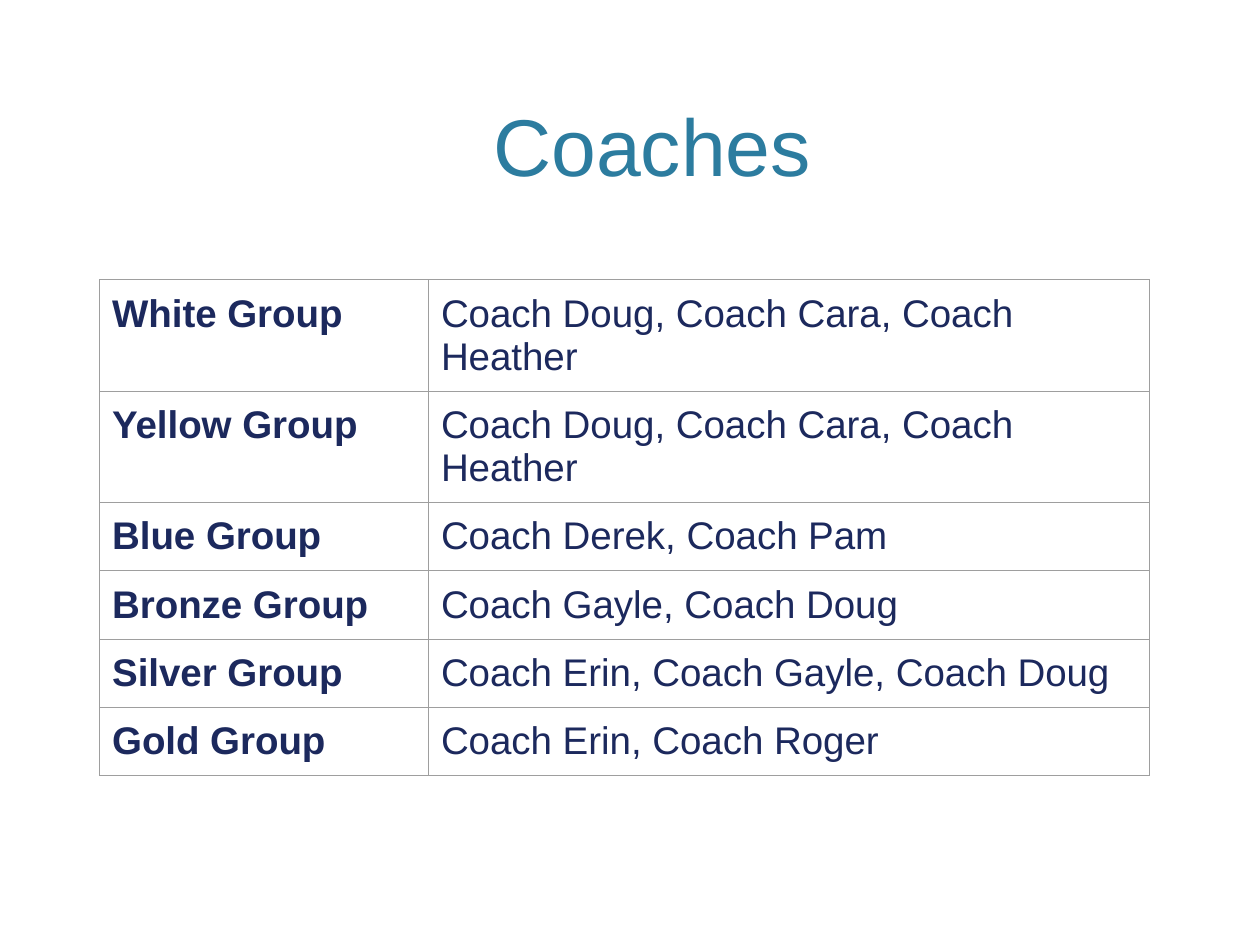
from lxml.etree import SubElement
from pptx import Presentation
from pptx.dml.color import RGBColor
from pptx.enum.text import MSO_ANCHOR, MSO_AUTO_SIZE, PP_ALIGN
from pptx.oxml.ns import qn
from pptx.util import Inches, Pt

# Content
TITLE = "Coaches"
GROUPS = [
    ("White Group", "Coach Doug, Coach Cara, Coach Heather"),
    ("Yellow Group", "Coach Doug, Coach Cara, Coach Heather"),
    ("Blue Group", "Coach Derek, Coach Pam"),
    ("Bronze Group", "Coach Gayle, Coach Doug"),
    ("Silver Group", "Coach Erin, Coach Gayle, Coach Doug"),
    ("Gold Group", "Coach Erin, Coach Roger"),
]

# Formats
TEAL = RGBColor(0x2C, 0x7C, 0x9F)
NAVY = RGBColor(0x1C, 0x29, 0x5D)
GREY = RGBColor(0x9E, 0x9E, 0x9E)
TITLE_FONT = {"name": "Arial", "size": Pt(46), "bold": False}
CELL_FONT = {"name": "Arial", "size": Pt(22)}
TITLE_BOX = {"left": 1.9, "top": 0.12, "width": 6.55, "height": 1.46}
TABLE_LEFT, TABLE_TOP = 0.79, 2.22
COLUMN_WIDTHS = (2.61, 5.72)
ROW_HEIGHT = 0.42
PADDING = Inches(0.1)
BORDER_WIDTH = Pt(0.75)


def set_font(font, values, color):
    for name, value in values.items():
        setattr(font, name, value)
    font.color.rgb = color


def add_borders(cell):
    properties = cell._tc.get_or_add_tcPr()
    for index, side in enumerate(("a:lnL", "a:lnR", "a:lnT", "a:lnB")):
        line = properties.makeelement(qn(side), {"w": str(BORDER_WIDTH)})
        fill = SubElement(line, qn("a:solidFill"))
        SubElement(fill, qn("a:srgbClr"), val=str(GREY))
        properties.insert(index, line)


presentation = Presentation()
presentation.slide_width, presentation.slide_height = Inches(10), Inches(7.5)
slide = presentation.slides.add_slide(presentation.slide_layouts[5])

# Title
title = slide.shapes.title
for name, value in TITLE_BOX.items():
    setattr(title, name, Inches(value))
frame = title.text_frame
frame.text = TITLE
frame.auto_size = MSO_AUTO_SIZE.NONE
frame.vertical_anchor = MSO_ANCHOR.BOTTOM
frame.paragraphs[0].alignment = PP_ALIGN.CENTER
set_font(frame.paragraphs[0].font, TITLE_FONT, TEAL)

# Table of groups and their coaches
table = slide.shapes.add_table(
    len(GROUPS), len(COLUMN_WIDTHS), Inches(TABLE_LEFT), Inches(TABLE_TOP),
    Inches(sum(COLUMN_WIDTHS)), Inches(ROW_HEIGHT * len(GROUPS))).table
table.first_row = table.horz_banding = False
for column, width in zip(table.columns, COLUMN_WIDTHS):
    column.width = Inches(width)

for row_index, group in enumerate(GROUPS):
    table.rows[row_index].height = Inches(ROW_HEIGHT)
    for column_index, text in enumerate(group):
        cell = table.cell(row_index, column_index)
        cell.text = text
        cell.fill.background()
        for side in ("left", "right", "top", "bottom"):
            setattr(cell, f"margin_{side}", PADDING)
        font = cell.text_frame.paragraphs[0].font
        set_font(font, CELL_FONT, NAVY)
        font.bold = column_index == 0
        add_borders(cell)

presentation.save("out.pptx")
